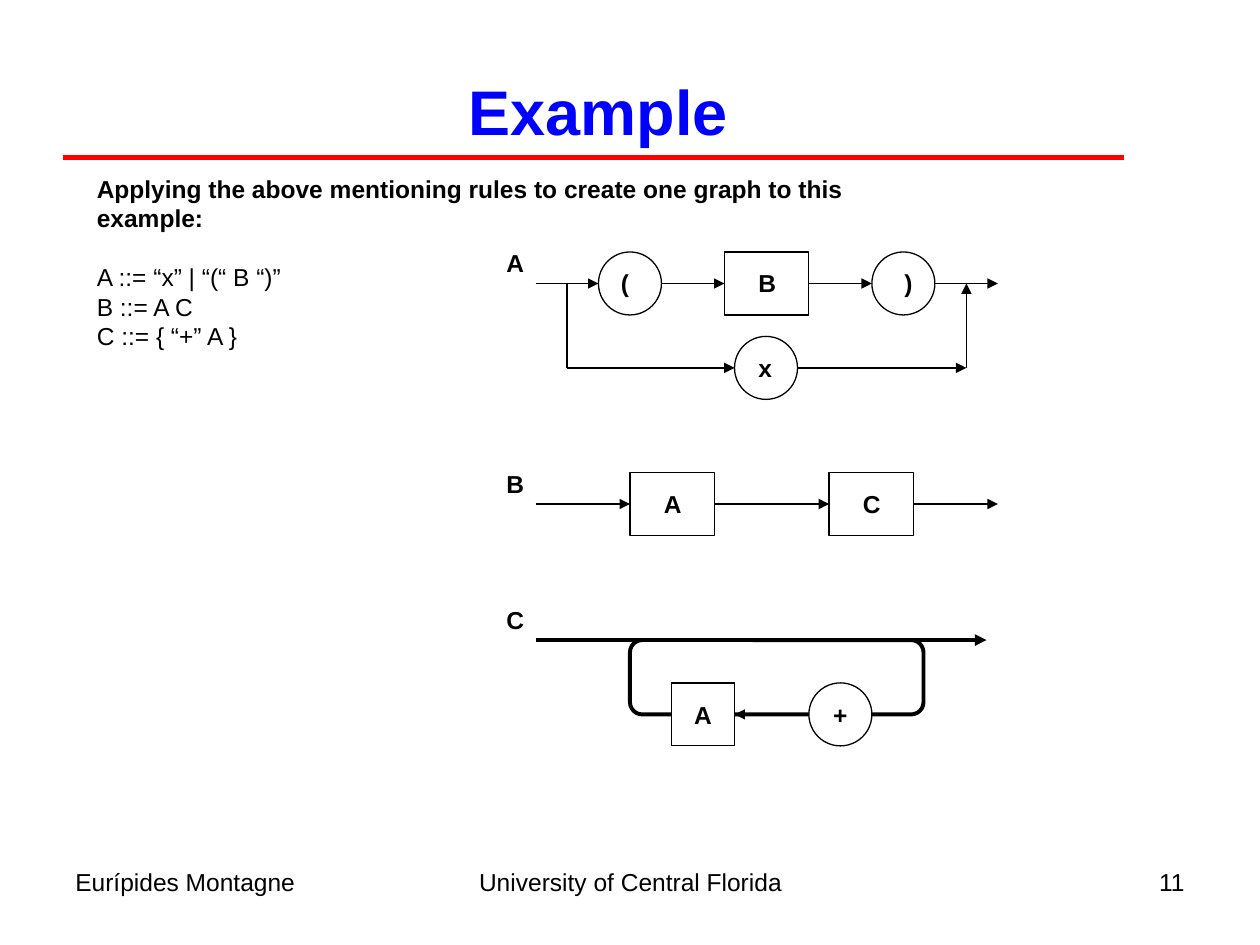
import pptx
import pptx.dml.color
import pptx.enum.shapes
import pptx.enum.text
import pptx.oxml
import pptx.oxml.ns
import pptx.util

Inches = pptx.util.Inches
Pt = pptx.util.Pt
SHAPE = pptx.enum.shapes.MSO_SHAPE
ALIGN = pptx.enum.text.PP_ALIGN
ANCHOR = pptx.enum.text.MSO_ANCHOR

BLACK = pptx.dml.color.RGBColor(0x00, 0x00, 0x00)
WHITE = pptx.dml.color.RGBColor(0xFF, 0xFF, 0xFF)
BLUE = pptx.dml.color.RGBColor(0x00, 0x00, 0xFF)
RED = pptx.dml.color.RGBColor(0xFF, 0x00, 0x00)
RIGHT, LEFT = 3, 1  # connection sites of a rectangle


def write(frame, text, size=14, bold=False, color=BLACK, align=ALIGN.LEFT,
          anchor=ANCHOR.TOP, wrap=True, new_paragraph=False, space_before=0):
    frame.word_wrap = wrap
    frame.vertical_anchor = anchor
    paragraph = frame.add_paragraph() if new_paragraph else frame.paragraphs[0]
    paragraph.alignment = align
    paragraph.space_before = Pt(space_before)
    run = paragraph.add_run()
    run.text = text
    run.font.name = "Arial"
    run.font.size = Pt(size)
    run.font.bold = bold
    run.font.color.rgb = color


def draw_line(start, end, color=BLACK, width=0.75, arrow=True, source=None, target=None):
    connector = slide.shapes.add_connector(
        pptx.enum.shapes.MSO_CONNECTOR.STRAIGHT, *map(Inches, start + end))
    if source:
        connector.begin_connect(nodes[source], RIGHT)
    if target:
        connector.end_connect(nodes[target[0]], target[1])
    connector.line.color.rgb = color
    connector.line.width = Pt(width)
    properties = connector.element.spPr
    if arrow:
        outline = properties.find(pptx.oxml.ns.qn("a:ln"))
        outline.append(pptx.oxml.parse_xml(
            f'<a:tailEnd {pptx.oxml.ns.nsdecls("a")} type="triangle"/>'))
    properties.append(pptx.oxml.parse_xml(f'<a:effectLst {pptx.oxml.ns.nsdecls("a")}/>'))


presentation = pptx.Presentation()
presentation.slide_width = Inches(10)
presentation.slide_height = Inches(7.5)
slide = presentation.slides.add_slide(presentation.slide_layouts[5])

# Title and red rule
title = slide.shapes.title
title.left, title.top, title.width, title.height = map(Inches, (0.25, 0.25, 9, 1.25))
write(title.text_frame, "Example", size=36, bold=True, color=BLUE,
      align=ALIGN.CENTER, anchor=ANCHOR.MIDDLE)
draw_line((0.5, 1.25), (8.92, 1.25), color=RED, width=3, arrow=False)

# Footer
for left, width, text, align in (
    (0.5, 2.33, "Eurípides Montagne", ALIGN.LEFT),
    (3.42, 3.17, "University of Central Florida", ALIGN.CENTER),
    (7.17, 2.33, "11", ALIGN.RIGHT),
):
    box = slide.shapes.add_textbox(Inches(left), Inches(6.83), Inches(width), Inches(0.52))
    write(box.text_frame, text, align=align)

# Introduction and grammar
grammar = slide.shapes.add_textbox(Inches(0.67), Inches(1.33), Inches(6.9), Inches(1.5))
write(grammar.text_frame,
      "Applying the above mentioning rules to create one graph to this example:", bold=True)
for text, gap in (("A ::= “x” | “(“ B “)”", 17), ("B ::= A C", 0), ("C ::= { “+” A }", 0)):
    write(grammar.text_frame, text, new_paragraph=True, space_before=gap)

# Nodes of the three graphs, with the loop of graph C behind its nodes
nodes = {}
for key, kind, left, top, width, height, weight, fill, text in (
    ("A open", SHAPE.OVAL, 4.75, 2, 0.5, 0.5, 0.75, None, None),
    ("A x", SHAPE.OVAL, 5.83, 2.67, 0.5, 0.5, 0.75, None, None),
    ("A close", SHAPE.OVAL, 6.92, 2, 0.5, 0.5, 0.75, None, None),
    ("A B", SHAPE.RECTANGLE, 5.75, 2, 0.67, 0.5, 0.75, None, None),
    ("B A", SHAPE.RECTANGLE, 5, 3.75, 0.67, 0.5, 0.75, None, None),
    ("B C", SHAPE.RECTANGLE, 6.58, 3.75, 0.67, 0.5, 0.75, None, None),
    ("C loop", SHAPE.FLOWCHART_ALTERNATE_PROCESS, 5, 5.08, 2.33, 0.59, 2.25, None, None),
    ("C A", SHAPE.RECTANGLE, 5.33, 5.42, 0.5, 0.5, 0.75, WHITE, "A"),
    ("C plus", SHAPE.OVAL, 6.42, 5.42, 0.5, 0.5, 0.75, WHITE, "+"),
):
    node = slide.shapes.add_shape(kind, *map(Inches, (left, top, width, height)))
    node.shadow.inherit = False
    node.line.color.rgb = BLACK
    node.line.width = Pt(weight)
    if fill is None:
        node.fill.background()
    else:
        node.fill.solid()
        node.fill.fore_color.rgb = fill
    if text:
        write(node.text_frame, text, bold=True, align=ALIGN.CENTER,
              anchor=ANCHOR.MIDDLE, wrap=False)
    nodes[key] = node

# Graph names and symbols
for text, left, top, width in (
    ("A", 3.92, 1.92, 0.34), ("B", 3.92, 3.67, 0.34), ("C", 3.92, 4.75, 0.34),
    ("(", 4.83, 2.08, 0.27), ("B", 5.92, 2.08, 0.34), (")", 7.08, 2.08, 0.27),
    ("x", 5.92, 2.75, 0.31), ("A", 5.17, 3.83, 0.34), ("C", 6.75, 3.83, 0.34),
):
    label = slide.shapes.add_textbox(*map(Inches, (left, top, width, 0.33)))
    write(label.text_frame, text, bold=True, wrap=False)

# Graph A: main path, then the branch through x
draw_line((4.25, 2.25), (4.75, 2.25))
draw_line((5.25, 2.25), (5.75, 2.25), target=("A B", LEFT))
draw_line((6.42, 2.25), (6.92, 2.25), source="A B")
draw_line((7.42, 2.25), (7.92, 2.25))
draw_line((4.5, 2.92), (4.5, 2.25), arrow=False)
draw_line((4.5, 2.92), (5.83, 2.92))
draw_line((6.33, 2.92), (7.67, 2.92))
draw_line((7.67, 2.92), (7.67, 2.25))

# Graph B
draw_line((4.25, 4), (5, 4), target=("B A", LEFT))
draw_line((5.67, 4), (6.58, 4), source="B A", target=("B C", LEFT))
draw_line((7.25, 4), (7.92, 4), source="B C")

# Graph C
draw_line((4.25, 5.08), (7.83, 5.08), width=2.25)
draw_line((6.08, 5.67), (5.83, 5.67), target=("C A", RIGHT))

presentation.save("out.pptx")
